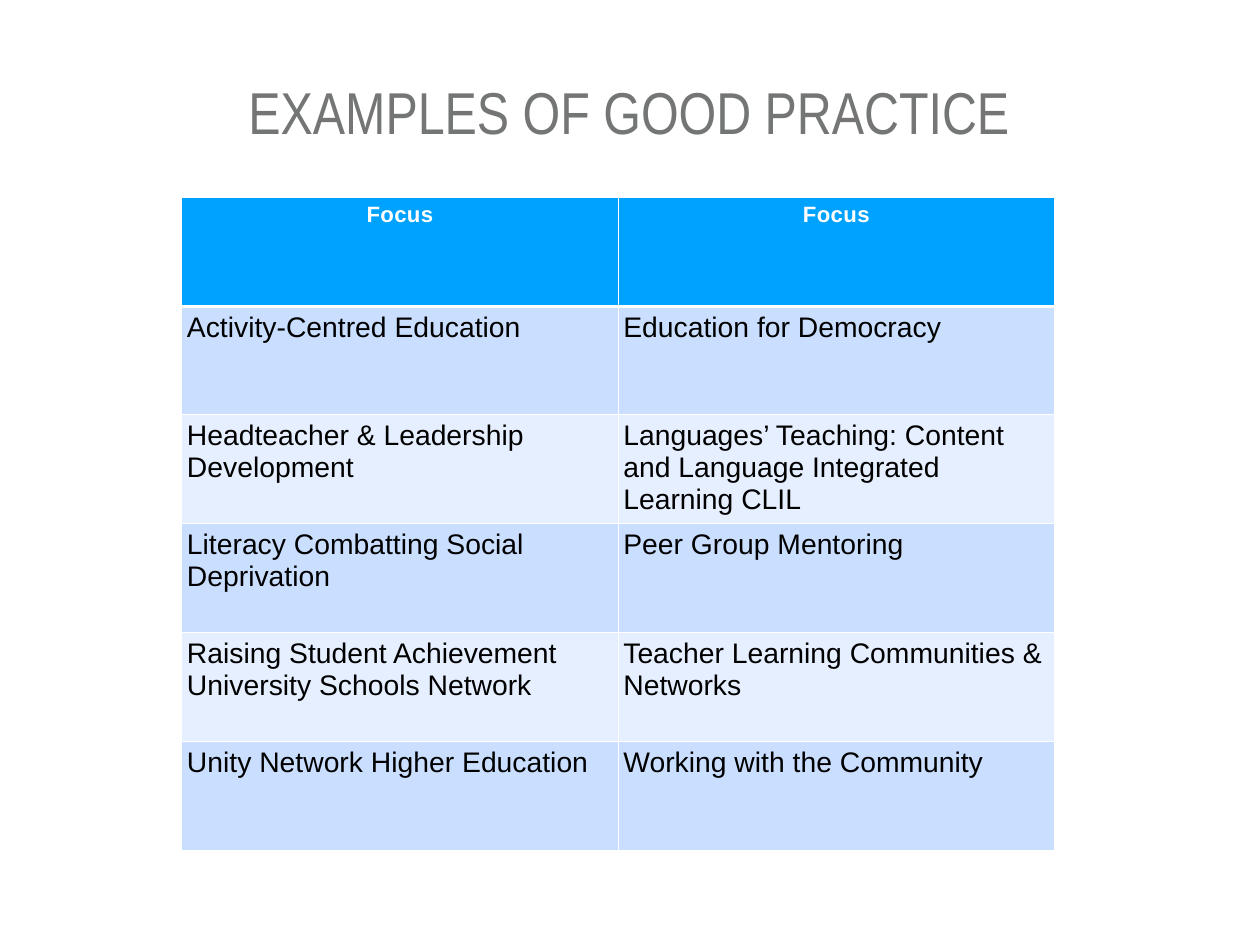
from dataclasses import dataclass

from lxml import etree
from pptx import Presentation
from pptx.dml.color import RGBColor
from pptx.enum.text import MSO_ANCHOR, MSO_AUTO_SIZE, PP_ALIGN
from pptx.oxml.ns import qn
from pptx.util import Cm, Pt

CENTER, LEFT = PP_ALIGN.CENTER, PP_ALIGN.LEFT
TOP = MSO_ANCHOR.TOP
NO_AUTOFIT = MSO_AUTO_SIZE.NONE
TITLE_ONLY = 5


@dataclass(frozen=True)
class Theme:
    title_font: str = "Arial Narrow"
    table_font: str = "Arial"
    title_size: int = 48
    header_size: int = 18
    body_size: int = 23
    title_color: str = "747676"
    header_color: str = "FFFFFF"
    body_color: str = "000000"
    header_fill: str = "00A2FF"
    band_fills: tuple = ("CADFFF", "E6EFFF")
    border_color: str = "FFFFFF"
    border: int = 1
    header_rule: int = 3
    inset: float = 0.15


PRACTICES = [
    ("Focus", "Focus"),
    ("Activity-Centred Education", "Education for Democracy"),
    ("Headteacher & Leadership Development",
     "Languages’ Teaching: Content and Language Integrated Learning CLIL"),
    ("Literacy Combatting Social Deprivation", "Peer Group Mentoring"),
    ("Raising Student Achievement University Schools Network",
     "Teacher Learning Communities & Networks"),
    ("Unity Network Higher Education", "Working with the Community"),
]


def write(frame, text, *, font, size, color, align=LEFT, bold=False, spacing=0):
    """Put one formatted paragraph into a text frame."""
    paragraph = frame.paragraphs[0]
    paragraph.alignment = align
    paragraph.space_before = Pt(0)
    run = paragraph.add_run()
    run.text = text
    run.font.name = font
    run.font.size = Pt(size)
    run.font.bold = bold
    run.font.color.rgb = RGBColor.from_string(color)
    if spacing:
        run.font._element.set("spc", str(round(spacing * 100)))


class SlideBuilder:
    def __init__(self, slide, theme):
        self.slide = slide
        self.theme = theme

    def set_insets(self, holder):
        for side in ("left", "right", "top", "bottom"):
            setattr(holder, f"margin_{side}", Cm(self.theme.inset))
        holder.vertical_anchor = TOP

    def title(self, text, left, top, width, height):
        theme = self.theme
        heading = self.slide.shapes.title
        heading.left, heading.top = Cm(left), Cm(top)
        heading.width, heading.height = Cm(width), Cm(height)
        frame = heading.text_frame
        frame.word_wrap = True
        frame.auto_size = NO_AUTOFIT
        self.set_insets(frame)
        write(frame, text, font=theme.title_font, size=theme.title_size,
              color=theme.title_color, align=CENTER)

    def cell_borders(self, cell, widths):
        properties = cell._tc.get_or_add_tcPr()
        for position, (side, width) in enumerate(widths.items()):
            line = etree.Element(qn(f"a:ln{side}"), w=str(Pt(width)))
            fill = etree.SubElement(line, qn("a:solidFill"))
            etree.SubElement(fill, qn("a:srgbClr"), val=self.theme.border_color)
            properties.insert(position, line)

    def table(self, rows, left, top, column_width, row_height):
        theme = self.theme
        columns = len(rows[0])
        grid = self.slide.shapes.add_table(
            len(rows), columns, Cm(left), Cm(top),
            Cm(column_width * columns), Cm(row_height * len(rows))).table
        for column in grid.columns:
            column.width = Cm(column_width)
        for row in grid.rows:
            row.height = Cm(row_height)

        header_format = dict(size=theme.header_size, color=theme.header_color,
                             align=CENTER, bold=True, spacing=0.3)
        body_format = dict(size=theme.body_size, color=theme.body_color)
        for row_index, entries in enumerate(rows):
            is_header = row_index == 0
            fill = theme.header_fill if is_header else theme.band_fills[(row_index - 1) % 2]
            widths = {
                "L": theme.border,
                "R": theme.border,
                "T": theme.header_rule if row_index == 1 else theme.border,
                "B": theme.header_rule if is_header else theme.border,
            }
            for column_index, entry in enumerate(entries):
                cell = grid.cell(row_index, column_index)
                self.set_insets(cell)
                cell.fill.solid()
                cell.fill.fore_color.rgb = RGBColor.from_string(fill)
                self.cell_borders(cell, widths)
                write(cell.text_frame, entry, font=theme.table_font,
                      **(header_format if is_header else body_format))


def main():
    deck = Presentation()
    deck.slide_width, deck.slide_height = Cm(36.12), Cm(27.1)
    slide = deck.slides.add_slide(deck.slide_layouts[TITLE_ONLY])
    builder = SlideBuilder(slide, Theme())

    # Heading
    builder.title("EXAMPLES OF GOOD PRACTICE", 1.57, 2.01, 32.94, 2.01)

    # Table of practices
    builder.table(PRACTICES, 5.21, 5.66, column_width=12.51, row_height=3.12)

    deck.save("out.pptx")


if __name__ == "__main__":
    main()
